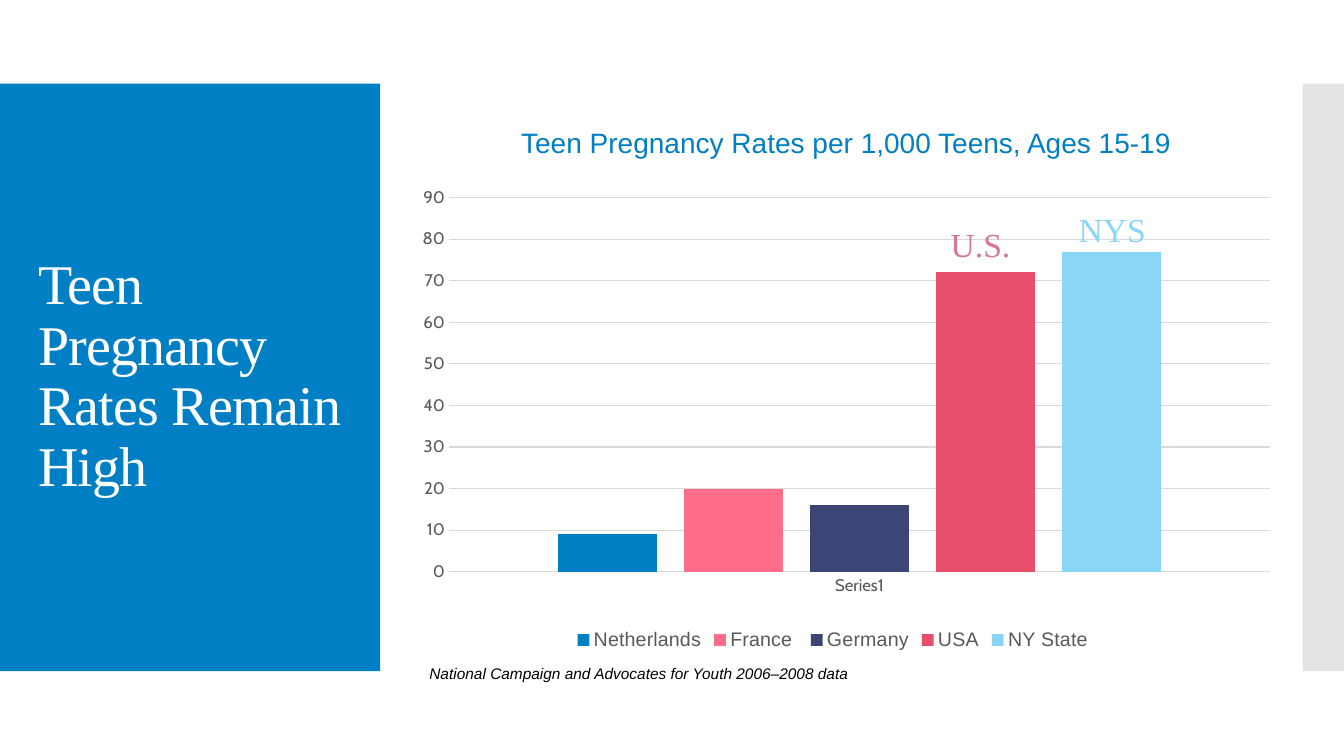
from lxml import etree
from pptx import Presentation
from pptx.chart.data import CategoryChartData
from pptx.dml.color import RGBColor
from pptx.enum.chart import XL_CHART_TYPE, XL_LEGEND_POSITION, XL_TICK_MARK
from pptx.enum.shapes import MSO_SHAPE
from pptx.enum.text import MSO_ANCHOR, PP_ALIGN
from pptx.oxml import parse_xml
from pptx.oxml.ns import nsdecls, qn
from pptx.util import Inches, Pt

COLUMNS = XL_CHART_TYPE.COLUMN_CLUSTERED
BOTTOM = XL_LEGEND_POSITION.BOTTOM
NO_TICK = XL_TICK_MARK.NONE
RECTANGLE = MSO_SHAPE.RECTANGLE
MIDDLE, TOP = MSO_ANCHOR.MIDDLE, MSO_ANCHOR.TOP
LEFT = PP_ALIGN.LEFT

WIDTH, HEIGHT = 13.33, 7.5
BAND_TOP, BAND_HEIGHT = 0.83, 5.83
BLUE, SKY, GREY, LIGHT_GREY = "007FC4", "89D6F7", "595959", "D9D9D9"
SERIF, SANS, AXIS_FONT = "Times New Roman", "Arial", "Cabin"

TITLE = "Teen Pregnancy Rates Remain High"
TITLE_BOX = (0.28, 1.23, 3.22, 5.03)
CHART_BOX = (3.76, 1.55, 9, 4.95)
PLOT_SHARES = {"x": 0.077, "y": 0.083, "w": 0.905, "h": 0.75}
CATEGORY = "Series1"
RATES = [
    ("Netherlands", 9, BLUE),
    ("France ", 20, "FF6D88"),
    ("Germany", 16, "3C4676"),
    ("USA", 72, "E84D69"),
    ("NY State", 77, SKY),
]
LABELS = [
    ("National Campaign and Advocates for Youth 2006–2008 data",
     (4.16, 6.54, 7.08, 0.29), dict(size=11, name=SANS, color="000000", italic=True)),
    ("U.S.", (9.33, 2.17, 0.87, 0.5), dict(size=24, name=SERIF, color="DA758F")),
    ("NYS", (10.6, 2.02, 0.88, 0.5), dict(size=24, name=SERIF, color=SKY)),
    ("Teen Pregnancy Rates per 1,000 Teens, Ages 15-19",
     (5.07, 1.2, 7.42, 0.44), dict(size=20, name=SANS, color=BLUE)),
]


def rgb(value):
    """Return the colour of a hex string."""
    return RGBColor.from_string(value)


def style_font(font, size, name, color, italic=False):
    """Set the look of a font."""
    font.size, font.name, font.italic = Pt(size), name, italic
    font.color.rgb = rgb(color)


def write_text(shape, text, anchor=TOP, line_spacing=1.0, spacing=None, **style):
    """Write one formatted paragraph into a shape."""
    frame = shape.text_frame
    frame.word_wrap = True
    frame.vertical_anchor = anchor
    paragraph = frame.paragraphs[0]
    paragraph.alignment = LEFT
    paragraph.line_spacing = line_spacing
    run = paragraph.add_run()
    run.text = text
    style_font(run.font, **style)
    if spacing is not None:
        run.font._element.set("spc", str(round(spacing * 100)))


def add_band(slide, left, width, color, opacity=None):
    """Add a side band, optionally translucent."""
    band = slide.shapes.add_shape(
        RECTANGLE, Inches(left), Inches(BAND_TOP), Inches(width), Inches(BAND_HEIGHT))
    band.shadow.inherit = False
    band.fill.solid()
    band.fill.fore_color.rgb = rgb(color)
    band.line.fill.background()
    if opacity is not None:
        tone = band._element.spPr.find(".//" + qn("a:srgbClr"))
        etree.SubElement(tone, qn("a:alpha"), val=str(opacity * 1000))


def add_title(slide):
    """Place the title above the blue band."""
    title = slide.shapes.title
    title.left, title.top, title.width, title.height = map(Inches, TITLE_BOX)
    slide.shapes._spTree.append(title._element)
    write_text(title, TITLE, anchor=MIDDLE, line_spacing=0.9, spacing=-0.6,
               size=40, name=SERIF, color="FFFFFF")


def set_plot_layout(chart):
    """Fix the inner plot area as shares of the chart."""
    plot_area = chart._chartSpace.chart.plotArea
    for layout in plot_area.findall(qn("c:layout")):
        plot_area.remove(layout)
    modes = "".join(f'<c:{key}Mode val="edge"/>' for key in "xy")
    shares = "".join(f'<c:{key} val="{share}"/>' for key, share in PLOT_SHARES.items())
    plot_area.insert(0, parse_xml(
        f'<c:layout {nsdecls("c")}><c:manualLayout><c:layoutTarget val="inner"/>'
        f'{modes}{shares}</c:manualLayout></c:layout>'))


def add_rates_chart(slide):
    """Add the column chart of pregnancy rates."""
    data = CategoryChartData()
    data.categories = [CATEGORY]
    for name, rate, _ in RATES:
        data.add_series(name, [rate])
    chart = slide.shapes.add_chart(COLUMNS, *map(Inches, CHART_BOX), data).chart
    chart.has_title = False
    style_font(chart.font, 10, AXIS_FONT, "000000")
    chart.has_legend = True
    chart.legend.position = BOTTOM
    chart.legend.include_in_layout = False
    style_font(chart.legend.font, 14, SANS, GREY)

    plot = chart.plots[0]
    plot.vary_by_categories = False
    plot.gap_width, plot.overlap = 219, -27
    for series, (_, _, color) in zip(plot.series, RATES):
        series.format.fill.solid()
        series.format.fill.fore_color.rgb = rgb(color)

    for axis in (chart.category_axis, chart.value_axis):
        axis.major_tick_mark = axis.minor_tick_mark = NO_TICK
        style_font(axis.tick_labels.font, 12, AXIS_FONT, GREY)
    values = chart.value_axis
    values.minimum_scale, values.maximum_scale, values.major_unit = 0, 90, 10
    values.format.line.fill.background()
    for line in (chart.category_axis.format.line, values.major_gridlines.format.line):
        line.color.rgb = rgb(LIGHT_GREY)
        line.width = Pt(0.75)
    set_plot_layout(chart)


def main():
    """Build and save the slide."""
    presentation = Presentation()
    presentation.slide_width, presentation.slide_height = Inches(WIDTH), Inches(HEIGHT)
    slide = presentation.slides.add_slide(presentation.slide_layouts[5])
    add_band(slide, 0, 3.77, BLUE)
    add_band(slide, WIDTH - 0.41, 0.41, "C8C8C8", opacity=50)
    add_title(slide)
    add_rates_chart(slide)
    for text, box, style in LABELS:
        write_text(slide.shapes.add_textbox(*map(Inches, box)), text, **style)
    presentation.save("out.pptx")


if __name__ == "__main__":
    main()
